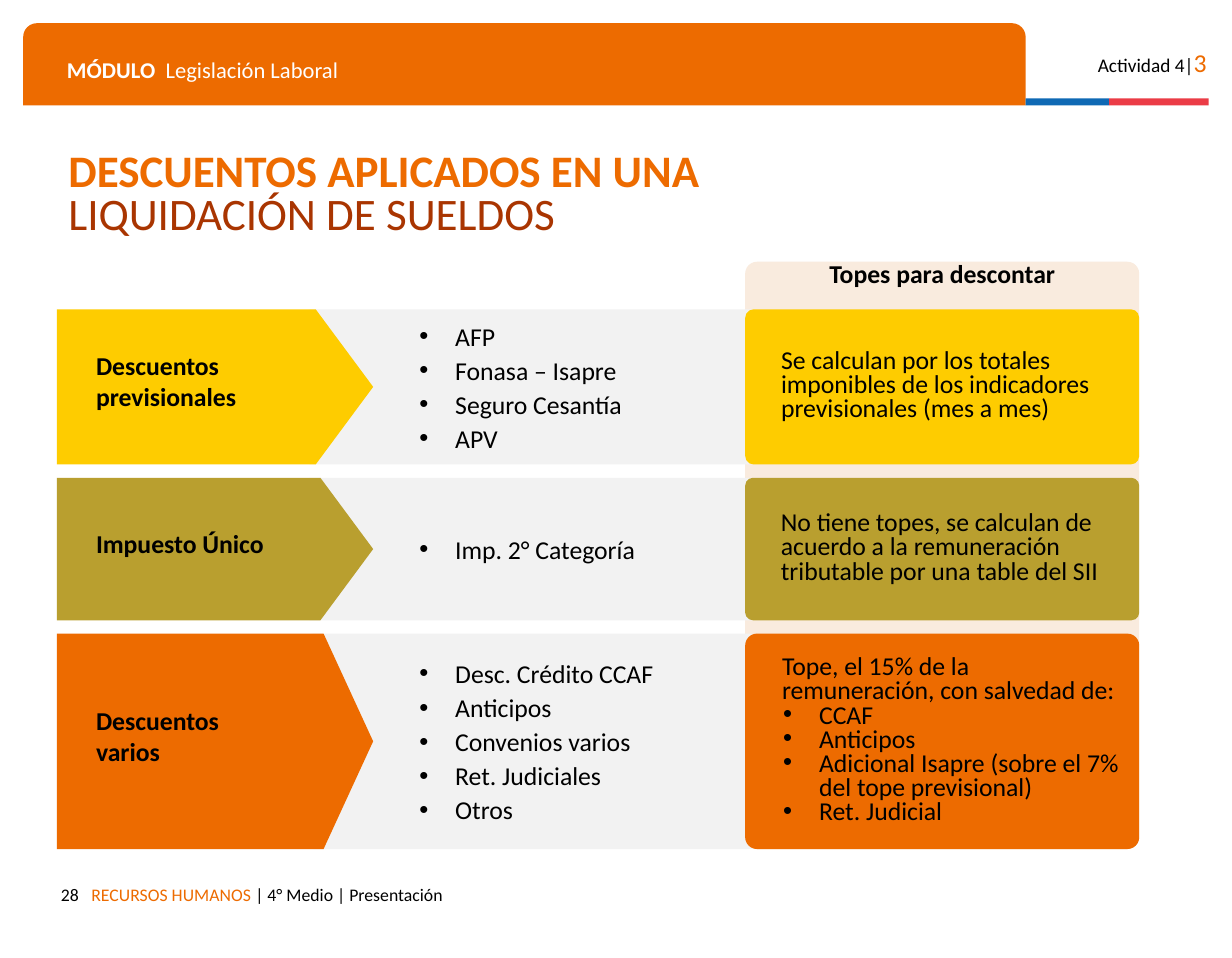
from dataclasses import dataclass

from lxml import etree
from pptx import Presentation
from pptx import util as u
from pptx.dml import color
from pptx.enum import shapes, text
from pptx.oxml import ns

COLORS = {
    "orange": "ED6B00", "rust": "A93501", "yellow": "FECC00", "olive": "B99F2F",
    "blue": "0F69B4", "red": "EB3C46", "cream": "F9EBDE", "gray": "F2F2F2",
    "black": "000000", "white": "FFFFFF",
}
FONT = "Calibri"
WIDTH, HEIGHT = u.Inches(10.63), u.Inches(8.27)
# The grid divides the slide into narrow columns and rows
COLUMN, ROW = WIDTH / 106.3, HEIGHT / 82.7
FIRST_TOP, ROW_GAP = 26.7, 1.15
ROUND = shapes.MSO_SHAPE.ROUNDED_RECTANGLE
LEFT, RIGHT, CENTER = text.PP_ALIGN.LEFT, text.PP_ALIGN.RIGHT, text.PP_ALIGN.CENTER
TOP, MIDDLE = text.MSO_ANCHOR.TOP, text.MSO_ANCHOR.MIDDLE


@dataclass
class Box:
    left: float
    top: float
    width: float
    height: float

    def lengths(self) -> list[int]:
        return [round(self.left * COLUMN), round(self.top * ROW),
                round(self.width * COLUMN), round(self.height * ROW)]


@dataclass
class Piece:
    words: str
    size: float = 16
    color: str = "black"
    bold: bool = False


@dataclass
class Discount:
    label: str
    items: list[str]
    limit: str
    limit_items: list[str]
    color: str
    height: float
    tip: float


@dataclass
class Caption:
    box: Box
    pieces: list[Piece]
    alignment: text.PP_ALIGN = LEFT
    inset: float = 1


DISCOUNTS = [
    Discount("Descuentos previsionales", ["AFP", "Fonasa – Isapre", "Seguro Cesantía", "APV"],
             "Se calculan por los totales imponibles de los indicadores previsionales (mes a mes)",
             [], "yellow", 13.4, 0.37),
    Discount("Impuesto Único", ["Imp. 2° Categoría"],
             "No tiene topes, se calculan de acuerdo a la remuneración tributable por una table del SII",
             [], "olive", 12.3, 0.37),
    Discount("Descuentos varios",
             ["Desc. Crédito CCAF", "Anticipos", "Convenios varios", "Ret. Judiciales", "Otros"],
             "Tope, el 15% de la remuneración, con salvedad de:",
             ["CCAF", "Anticipos", "Adicional Isapre (sobre el 7% del tope previsional)",
              "Ret. Judicial"], "orange", 18.6, 0.23),
]
CAPTIONS = [
    Caption(Box(4.8, 3.8, 81.4, 3.5), [Piece("MÓDULO  ", 14, "white", True),
                                       Piece("Legislación Laboral", 14, "white")]),
    Caption(Box(92.3, 3, 12.8, 3.8), [Piece("Actividad 4|", 12), Piece("3", 16, "orange")], RIGHT),
    Caption(Box(2, 75.3, 5.8, 2.9), [Piece("28", 11)], RIGHT),
    Caption(Box(6.9, 75.3, 71.4, 3.8), [Piece("RECURSOS HUMANOS ", 11, "orange"),
                                        Piece("| 4° Medio | Presentación", 11)]),
]
HEADING = Caption(Box(70.2, 21.8, 22.2, 4.5), [Piece("Topes para descontar", bold=True)],
                  CENTER, 0.5)


def add_block(slide, kind: shapes.MSO_SHAPE, box: Box, fill: str, adjustments: tuple = ()):
    shape = slide.shapes.add_shape(kind, *box.lengths())
    shape.shadow.inherit = False
    shape.fill.solid()
    shape.fill.fore_color.rgb = color.RGBColor.from_string(COLORS[fill])
    shape.line.fill.background()
    for index, value in enumerate(adjustments):
        shape.adjustments[index] = value
    return shape


def set_frame(frame, anchor: text.MSO_ANCHOR, inset: float = 0.5) -> None:
    frame.word_wrap = True
    frame.auto_size = text.MSO_AUTO_SIZE.NONE
    frame.vertical_anchor = anchor
    frame.margin_left = frame.margin_right = round(COLUMN)
    frame.margin_top = frame.margin_bottom = round(inset * ROW)


def format_run(run, piece: Piece) -> None:
    font = run.font
    font.name, font.size, font.bold = FONT, u.Pt(piece.size), piece.bold
    font.color.rgb = color.RGBColor.from_string(COLORS[piece.color])


def write_pieces(paragraph, pieces: list[Piece], alignment: text.PP_ALIGN = LEFT) -> None:
    paragraph.alignment = alignment
    for piece in pieces:
        run = paragraph.add_run()
        run.text = piece.words
        format_run(run, piece)


def write_lines(frame, lines: list[str], bold: bool = False) -> None:
    frame.text = "\n".join(lines)
    for paragraph in frame.paragraphs:
        paragraph.alignment = LEFT
        for run in paragraph.runs:
            format_run(run, Piece(run.text, bold=bold))


def indent(paragraph, margin: float, hanging: float = 0) -> None:
    properties = paragraph._p.get_or_add_pPr()
    properties.set("marL", str(round(margin * COLUMN)))
    properties.set("indent", str(round(-hanging * COLUMN)))


def add_bullet(paragraph, margin: float) -> None:
    indent(paragraph, margin, 3.1)
    properties = paragraph._p.get_or_add_pPr()
    bullet_color = etree.SubElement(properties, ns.qn("a:buClr"))
    etree.SubElement(bullet_color, ns.qn("a:srgbClr"), val=COLORS["black"])
    etree.SubElement(properties, ns.qn("a:buFont"), typeface="Arial")
    etree.SubElement(properties, ns.qn("a:buChar"), char="•")


def add_text(slide, box: Box, anchor: text.MSO_ANCHOR, inset: float = 0.5):
    frame = slide.shapes.add_textbox(*box.lengths()).text_frame
    set_frame(frame, anchor, inset)
    return frame


def add_caption(slide, caption: Caption) -> None:
    frame = add_text(slide, caption.box, TOP, caption.inset)
    write_pieces(frame.paragraphs[0], caption.pieces, caption.alignment)


def add_discount(slide, discount: Discount, top: float) -> None:
    height = discount.height
    add_block(slide, ROUND, Box(26.1, top, 39.5, height), "gray", (0.055,))
    add_block(slide, shapes.MSO_SHAPE.PENTAGON, Box(4.9, top, 27.3, height),
              discount.color, (discount.tip,))

    label = add_text(slide, Box(7.3, top - 0.5, 17.5, height), MIDDLE)
    write_lines(label, [discount.label], bold=True)
    label.paragraphs[0].space_before = u.Pt(6)

    items = add_text(slide, Box(35.2, top, 29, height), MIDDLE)
    write_lines(items, discount.items)
    for paragraph in items.paragraphs:
        paragraph.space_before = u.Pt(2)
        add_bullet(paragraph, 3.1)

    card = add_block(slide, ROUND, Box(64.3, top, 34, height), discount.color, (0.055,))
    set_frame(card.text_frame, MIDDLE)
    write_lines(card.text_frame, [discount.limit, *discount.limit_items])
    first, *others = card.text_frame.paragraphs
    for paragraph in card.text_frame.paragraphs:
        paragraph.line_spacing = u.Pt(15)
    indent(first, 1.9)
    for paragraph in others:
        add_bullet(paragraph, 5.1)


def main() -> None:
    presentation = Presentation()
    presentation.slide_width, presentation.slide_height = WIDTH, HEIGHT
    slide = presentation.slides.add_slide(presentation.slide_layouts[5])

    # Header band and captions
    add_block(slide, shapes.MSO_SHAPE.ROUND_2_SAME_RECTANGLE, Box(2, 2, 86.5, 7.1),
              "orange", (0.167, 0))
    add_block(slide, shapes.MSO_SHAPE.RECTANGLE, Box(88.5, 8.5, 7.2, 0.6), "blue")
    add_block(slide, shapes.MSO_SHAPE.RECTANGLE, Box(95.7, 8.5, 8.6, 0.6), "red")
    for caption in CAPTIONS:
        add_caption(slide, caption)

    # Title
    title = slide.shapes.title
    title.left, title.top, title.width, title.height = Box(4.9, 11.7, 74, 10.4).lengths()
    set_frame(title.text_frame, MIDDLE, 1)
    paragraph = title.text_frame.paragraphs[0]
    paragraph.line_spacing = 0.8
    write_pieces(paragraph, [Piece("DESCUENTOS APLICADOS EN UNA ", 28, "orange", True),
                             Piece("LIQUIDACIÓN DE SUELDOS", 28, "rust")])

    # Discount rows over the limits column
    add_block(slide, ROUND, Box(64.3, 22.6, 34, 50.7), "cream", (0.03,))
    add_caption(slide, HEADING)
    slide.shapes[-1].text_frame.paragraphs[0].space_before = u.Pt(6)
    top = FIRST_TOP
    for discount in DISCOUNTS:
        add_discount(slide, discount, top)
        top += discount.height + ROW_GAP

    presentation.save("out.pptx")


if __name__ == "__main__":
    main()
